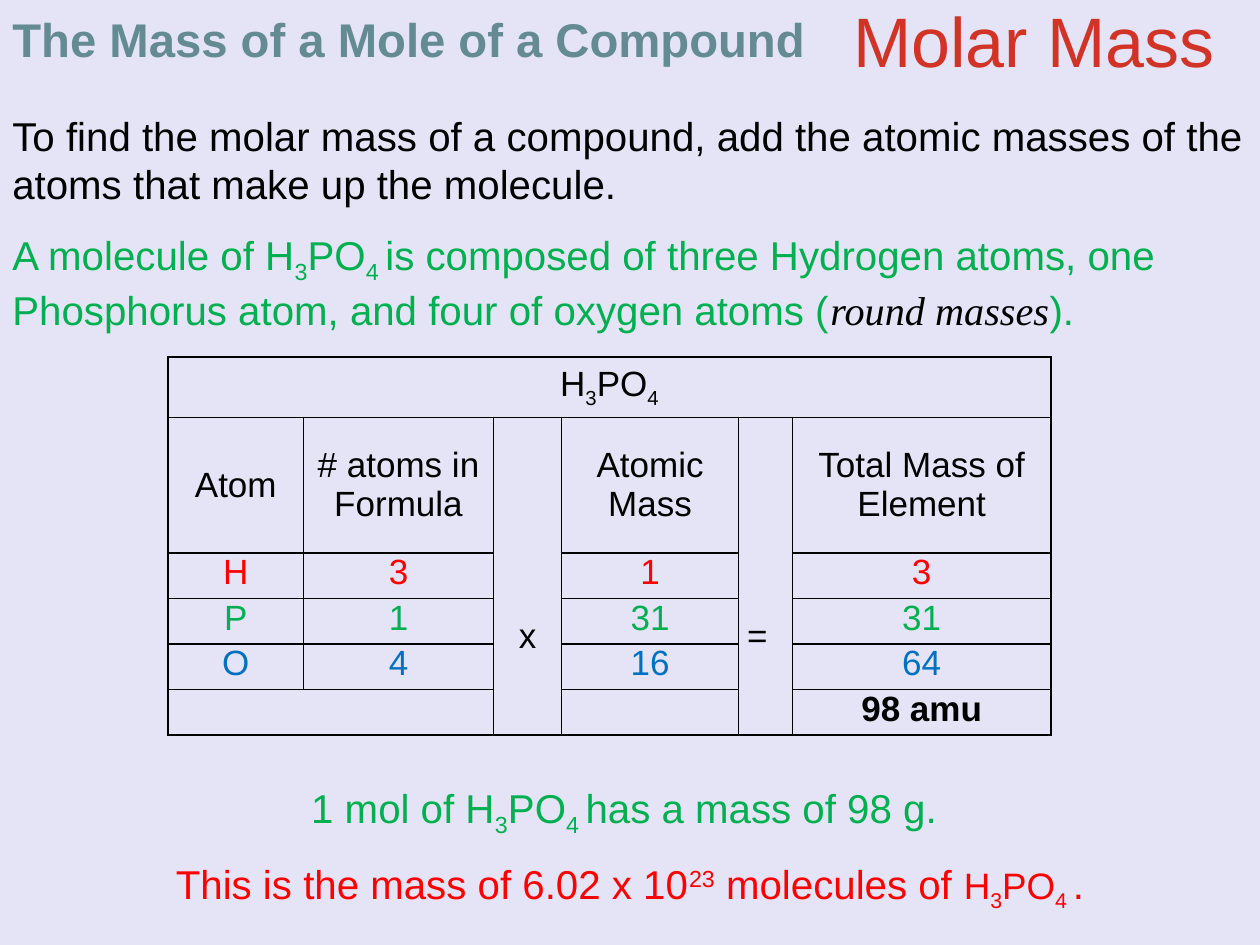
"""Builds a slide on finding the molar mass of a compound."""
import pptx
import pptx.dml.color
import pptx.enum.text
import pptx.oxml
import pptx.oxml.ns
import pptx.util

Pt = pptx.util.Pt
ALIGN = pptx.enum.text.PP_ALIGN
ANCHOR = pptx.enum.text.MSO_ANCHOR
COLORS = {
    "background": "E4E4F6", "title": "D13426", "heading": "658B92",
    "black": "000000", "red": "FF0000", "green": "00B050", "blue": "0070C0",
}
SUBSCRIPT, SUPERSCRIPT = -25000, 30000
FORMULA = [("H", 0), ("3", SUBSCRIPT), ("PO", 0)]
FORMULA_SPACED = FORMULA + [("4 ", SUBSCRIPT)]


def add_runs(paragraph, parts, color, size, name="Arial", **extra):
    for text, baseline in parts:
        run = paragraph.add_run()
        run.text = text
        for attribute, value in {"name": name, "size": Pt(size), **extra}.items():
            setattr(run.font, attribute, value)
        run.font.color.rgb = pptx.dml.color.RGBColor.from_string(COLORS[color])
        if baseline:
            run._r.get_or_add_rPr().set("baseline", str(baseline))


def add_text_frame(slide, left, top, width, height):
    frame = slide.shapes.add_textbox(Pt(left), Pt(top), Pt(width), Pt(height)).text_frame
    frame.word_wrap = True
    return frame


presentation = pptx.Presentation()
presentation.slide_width, presentation.slide_height = Pt(720), Pt(540)
slide = presentation.slides.add_slide(presentation.slide_layouts[5])
slide.background.fill.solid()
slide.background.fill.fore_color.rgb = pptx.dml.color.RGBColor.from_string(COLORS["background"])

title = slide.shapes.title
title_format = {"left": 461.5, "top": 0, "width": 258.5, "height": 45.4}
for attribute, value in title_format.items():
    setattr(title, attribute, Pt(value))
title.text_frame.auto_size = pptx.enum.text.MSO_AUTO_SIZE.NONE
title.text_frame.vertical_anchor = ANCHOR.MIDDLE
title.text_frame.paragraphs[0].alignment = ALIGN.CENTER
add_runs(title.text_frame.paragraphs[0], [("Molar Mass", 0)], "title", 40)

heading = add_text_frame(slide, 0, 5.8, 473.8, 36.7).paragraphs[0]
heading.line_spacing = 0.9
add_runs(heading, [("The Mass of a Mole of a Compound", 0)], "heading", 27, bold=True)

body = add_text_frame(slide, 0, 59.8, 720, 138.2)
add_runs(body.paragraphs[0], [(
    "To find the molar mass of a compound, add the atomic masses of the "
    "atoms that make up the molecule.", 0)], "black", 23)
composition = body.add_paragraph()
composition.space_before = Pt(13)
add_runs(composition, [("A molecule of ", 0)] + FORMULA_SPACED + [(
    "is composed of three Hydrogen atoms, one Phosphorus atom, "
    "and four of oxygen atoms (", 0)], "green", 23)
add_runs(composition, [("round masses", 0)], "black", 23, "Times New Roman", italic=True)
add_runs(composition, [(").", 0)], "green", 23)

conclusion = add_text_frame(slide, 0, 444.2, 720, 77)
mole, molecules = conclusion.paragraphs[0], conclusion.add_paragraph()
mole.alignment = molecules.alignment = ALIGN.CENTER
molecules.space_before = Pt(12)
add_runs(mole, [("1 mol of ", 0)] + FORMULA_SPACED + [("has a mass of 98 g. ", 0)], "green", 23)
add_runs(molecules, [("This is the mass of 6.02 x 10", 0), ("23", SUPERSCRIPT),
                     (" molecules of ", 0)], "red", 23)
add_runs(molecules, FORMULA_SPACED, "red", 21)
add_runs(molecules, [(".", 0)], "red", 23)

rows = [
    ("black", [FORMULA + [("4", SUBSCRIPT)], "", "", "", "", ""]),
    ("black", ["Atom", "# atoms in Formula", "x", "Atomic Mass", "=", "Total Mass of Element"]),
    ("red", ["H", "3", "", "1", "", "3"]),
    ("green", ["P", "1", "", "31", "", "31"]),
    ("blue", ["O", "4", "", "16", "", "64"]),
    ("black", ["", "", "", "", "", "98 amu"]),
]
column_widths = [77.5, 108.5, 39, 101, 31, 147.5]
row_heights = [34.5, 77.5, 26, 26, 26, 26]
table = slide.shapes.add_table(
    len(rows), len(column_widths), Pt(96), Pt(204),
    Pt(sum(column_widths)), Pt(sum(row_heights))).table
table.first_row = table.horz_banding = False
for column, width in zip(table.columns, column_widths):
    column.width = Pt(width)
for row, height in zip(table.rows, row_heights):
    row.height = Pt(height)

for row_index, (color, values) in enumerate(rows):
    for column_index, value in enumerate(values):
        cell = table.cell(row_index, column_index)
        is_operator = value in ("x", "=")
        cell_format = {
            "margin_left": Pt(5), "margin_right": Pt(5), "margin_bottom": 0,
            "margin_top": Pt(69 if is_operator else 0),
            "vertical_anchor": ANCHOR.MIDDLE if row_index < 2 else ANCHOR.TOP,
        }
        for attribute, setting in cell_format.items():
            setattr(cell, attribute, setting)
        for side in ("lnL", "lnR", "lnT", "lnB"):
            cell._tc.get_or_add_tcPr().append(pptx.oxml.parse_xml(
                f'<a:{side} {pptx.oxml.ns.nsdecls("a")} w="12700"><a:solidFill>'
                f'<a:srgbClr val="{COLORS["black"]}"/></a:solidFill></a:{side}>'))
        cell.fill.background()
        if value:
            paragraph = cell.text_frame.paragraphs[0]
            paragraph.alignment = ALIGN.LEFT if value == "=" else ALIGN.CENTER
            parts = [(value, 0)] if isinstance(value, str) else value
            add_runs(paragraph, parts, color, 20, bold=value == "98 amu")

for first, last in [((0, 0), (0, 5)), ((1, 2), (5, 2)), ((1, 4), (5, 4)), ((5, 0), (5, 1))]:
    table.cell(*first).merge(table.cell(*last))

presentation.save("out.pptx")
